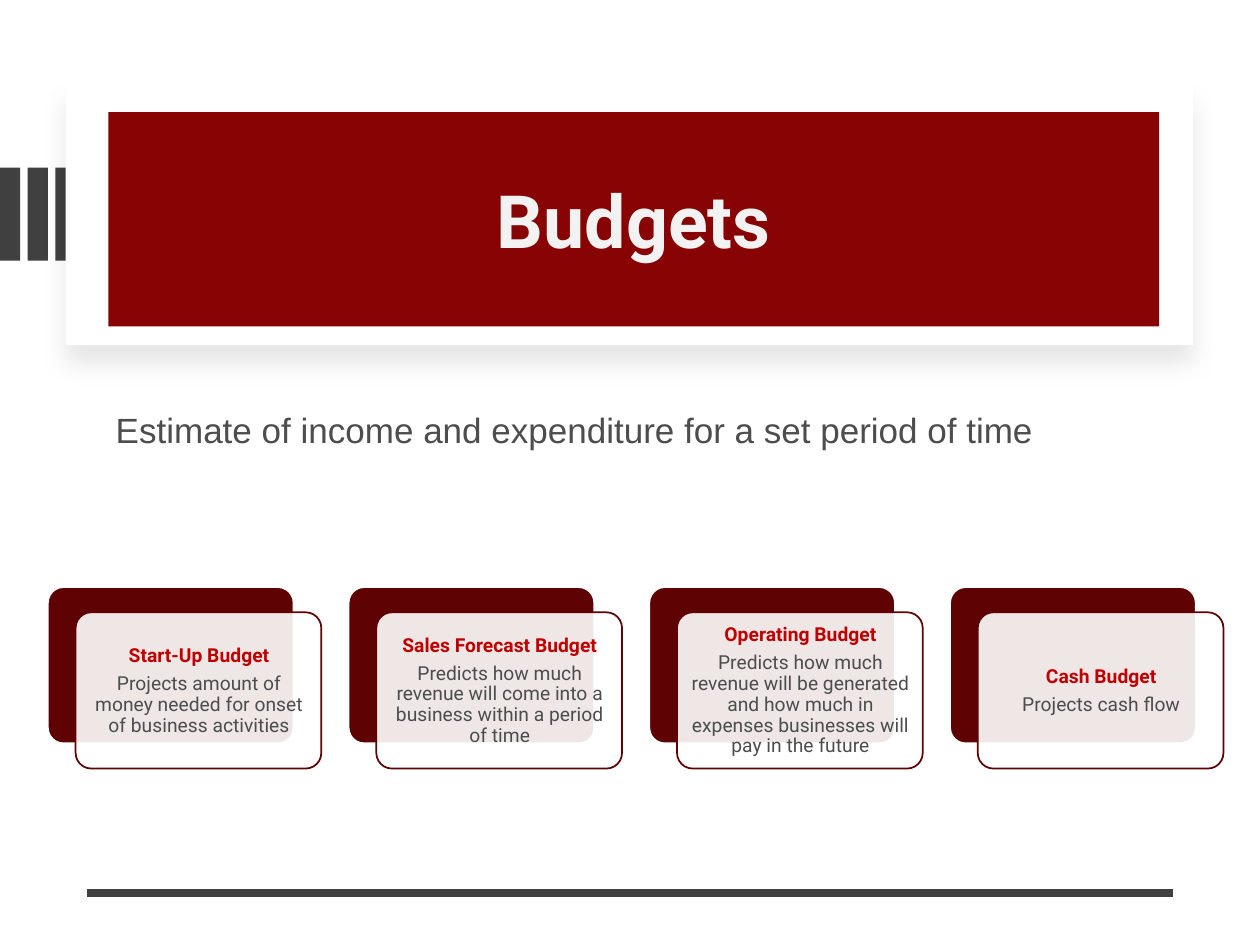
from lxml import etree
from pptx import Presentation
from pptx.dml.color import RGBColor
from pptx.enum.shapes import MSO_CONNECTOR, MSO_SHAPE
from pptx.enum.text import MSO_ANCHOR, PP_ALIGN
from pptx.oxml import parse_xml
from pptx.oxml.ns import nsdecls, qn
from pptx.util import Inches, Pt


def color(hex_string):
    return RGBColor.from_string(hex_string)


def add_box(kind, left, top, width, height, fill, line=None):
    shape = slide.shapes.add_shape(
        kind, Inches(left), Inches(top), Inches(width), Inches(height))
    shape.shadow.inherit = False
    shape.fill.solid()
    shape.fill.fore_color.rgb = color(fill)
    if line:
        shape.line.color.rgb = color(line)
        shape.line.width = Pt(1)
    else:
        shape.line.fill.background()
    return shape


presentation = Presentation()
presentation.slide_width = Inches(10)
presentation.slide_height = Inches(7.5)
slide = presentation.slides.add_slide(presentation.slide_layouts[6])

# Dark bars at the left edge
for index in range(3):
    add_box(MSO_SHAPE.RECTANGLE, 0.22 * index, 1.33, 0.16, 0.74, "404040")

# White title panel with a soft shadow below
panel = add_box(MSO_SHAPE.RECTANGLE, 0.52, 0.67, 8.95, 2.07, "FFFFFF")
effects = panel._element.spPr.find(qn("a:effectLst"))
effects.append(parse_xml(
    f'<a:outerShdw {nsdecls("a")} blurRad="{Pt(15)}" dist="{Pt(11)}" '
    'dir="5400000" algn="t" rotWithShape="0">'
    '<a:srgbClr val="000000"><a:alpha val="10000"/></a:srgbClr></a:outerShdw>'))

# Title
title = add_box(MSO_SHAPE.RECTANGLE, 0.86, 0.89, 8.34, 1.7, "870304")
title.text_frame.text = "Budgets"
title.text_frame.vertical_anchor = MSO_ANCHOR.MIDDLE
paragraph = title.text_frame.paragraphs[0]
paragraph.alignment = PP_ALIGN.CENTER
font = paragraph.runs[0].font
font.name, font.size, font.bold = "Roboto", Pt(42), True
font.color.rgb = color("F2F2F2")

# Footer line
footer = slide.shapes.add_connector(
    MSO_CONNECTOR.STRAIGHT, Inches(9.31), Inches(7.09), Inches(0.69), Inches(7.09))
footer.line.color.rgb = color("404040")
footer.line.width = Pt(4.5)
etree.SubElement(footer._element.spPr, qn("a:effectLst"))

# Budget cards: dark back, translucent front, centred text
budgets = [
    ("Start-Up Budget",
     "Projects amount of money needed for onset of business activities"),
    ("Sales Forecast Budget",
     "Predicts how much revenue will come into a business within a period of time"),
    ("Operating Budget",
     "Predicts how much revenue will be generated and how much in expenses "
     "businesses will pay in the future"),
    ("Cash Budget", "Projects cash flow"),
]
card_step = (7.54 - 0.38) / 3
for index, (name, description) in enumerate(budgets):
    left = 0.38 + card_step * index
    back = add_box(MSO_SHAPE.ROUNDED_RECTANGLE, left, 4.66, 1.95, 1.24, "5E0203", "FFFFFF")
    front = add_box(MSO_SHAPE.ROUNDED_RECTANGLE, left + 0.22, 4.86, 1.95, 1.24,
                    "FFFFFF", "5E0203")
    for card in (back, front):
        card.adjustments[0] = 0.1
    fill_color = front._element.spPr.find(qn("a:solidFill"))[0]
    etree.SubElement(fill_color, qn("a:alpha"), val="90000")

    label = slide.shapes.add_textbox(
        Inches(left + 0.26), Inches(4.9), Inches(1.88), Inches(1.17))
    text_frame = label.text_frame
    text_frame.word_wrap = True
    text_frame.vertical_anchor = MSO_ANCHOR.MIDDLE
    text_frame.margin_left = text_frame.margin_right = Inches(0.05)
    text_frame.margin_top = text_frame.margin_bottom = Inches(0.05)
    text_frame.text = f"{name}\n{description}"
    for paragraph, text_color, bold in zip(
            text_frame.paragraphs, ("C00000", "4D4D4D"), (True, False)):
        paragraph.alignment = PP_ALIGN.CENTER
        paragraph.line_spacing = 0.9
        paragraph.space_after = Pt(4)
        font = paragraph.runs[0].font
        font.name, font.size, font.bold = "Roboto", Pt(11), bold
        font.color.rgb = color(text_color)

# Definition
definition = slide.shapes.add_textbox(Inches(0.82), Inches(3.19), Inches(8), Inches(0.44))
definition.text_frame.word_wrap = True
definition.text_frame.text = "Estimate of income and expenditure for a set period of time"
font = definition.text_frame.paragraphs[0].runs[0].font
font.name, font.size = "Arial", Pt(20)
font.color.rgb = color("4D4D4D")

presentation.save("out.pptx")
